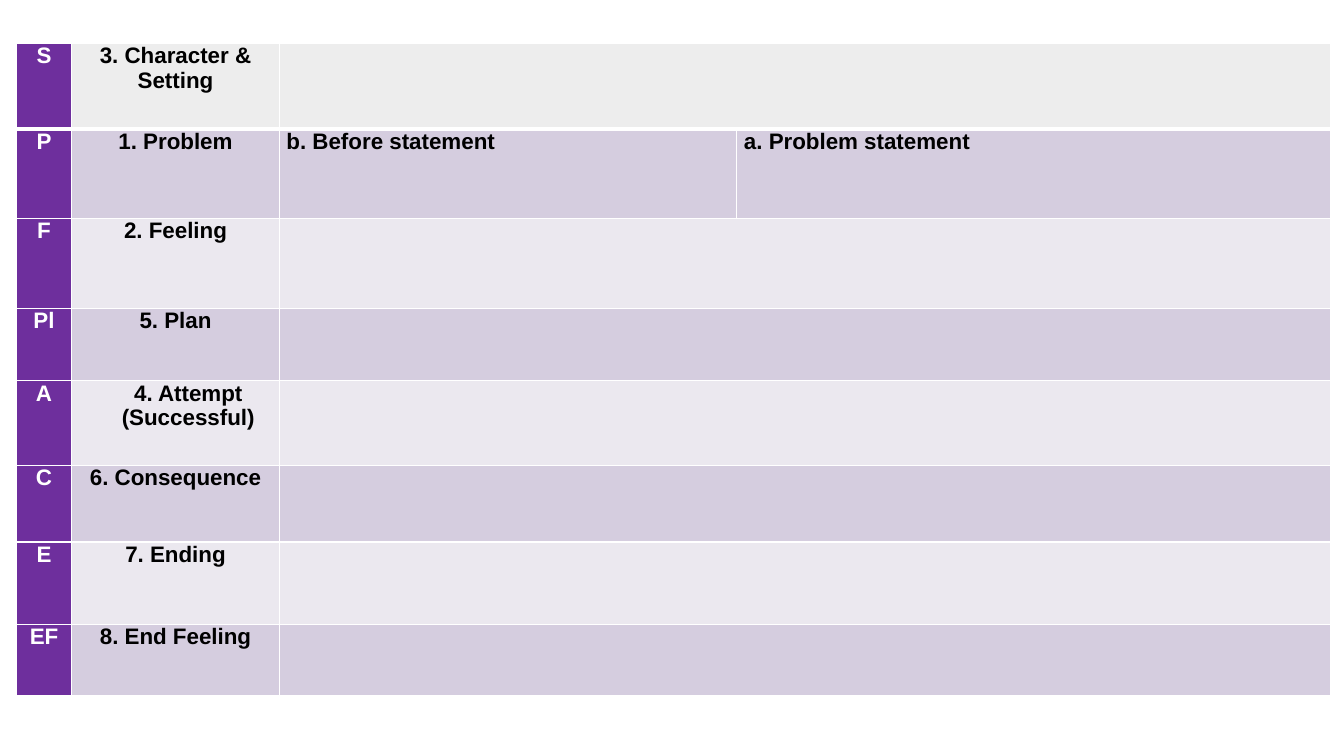
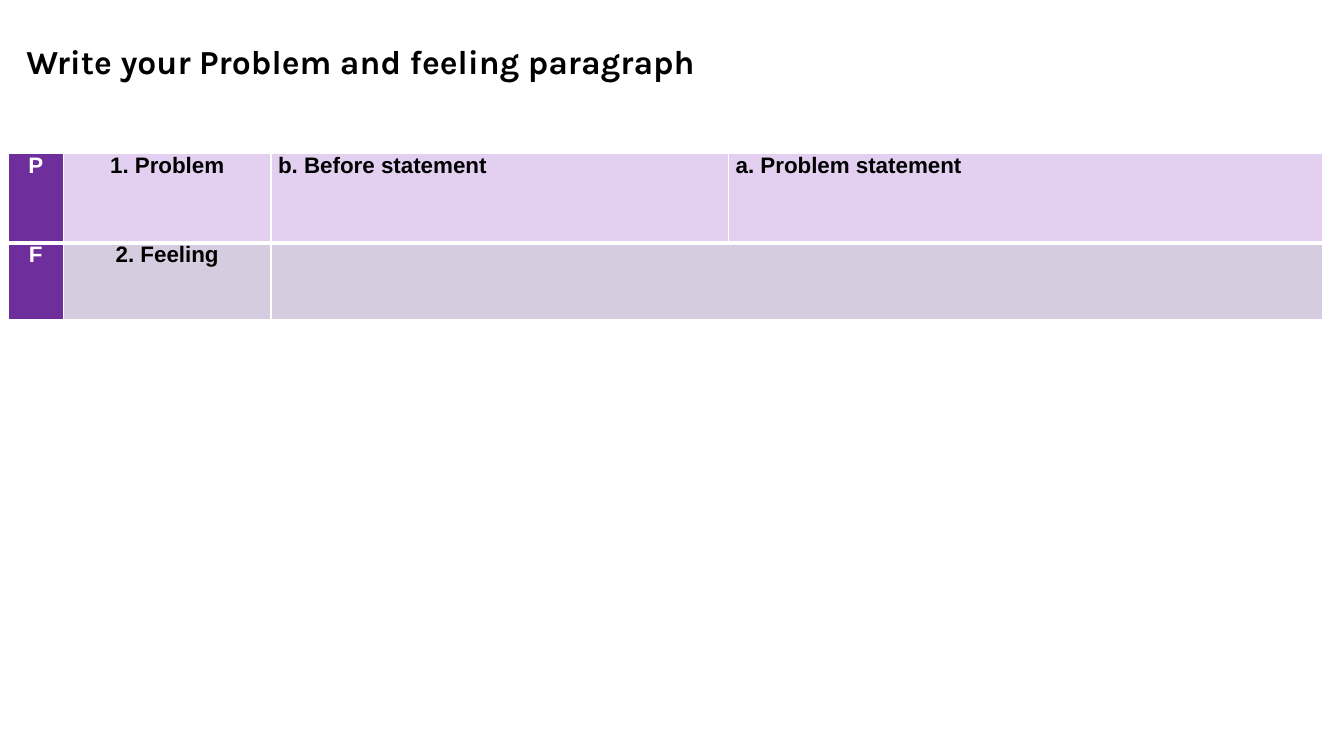
"""Build a story-planning grid and a paragraph-writing slide."""
from dataclasses import dataclass

from lxml import etree
from pptx import Presentation
from pptx.dml.color import RGBColor
from pptx.enum import text
from pptx.oxml import ns
from pptx.util import Cm, Pt

COLORS = {
    "purple": "6E2F9D",
    "grey": "EDEDED",
    "mauve": "D5CDDF",
    "pale": "EBE8EF",
    "lilac": "E3D0F1",
    "white": "FFFFFF",
    "black": "000000",
}
COL_WIDTHS = (1.4, 5.23, 11.53, 14.96)
HANGING = (0.97, -0.97)
CENTER, LEFT = text.PP_ALIGN.CENTER, text.PP_ALIGN.LEFT


@dataclass(frozen=True)
class Row:
    code: str
    label: str
    height: float
    prompts: tuple[str, ...] = ()
    indent: tuple[float, float] = (0, 0)


PROBLEM = Row("P", "1. Problem", 2.26,
              ("b. Before statement", "a. Problem statement"), HANGING)
STORY_ROWS = [
    Row("S", "3. Character &\nSetting", 2.16),
    PROBLEM,
    Row("F", "2. Feeling", 2.26),
    Row("Pl", "5. Plan", 1.83),
    Row("A", "4. Attempt (Successful)", 2.13, indent=(0.64, 0)),
    Row("C", "6. Consequence", 1.93),
    Row("E", "7. Ending", 2.08),
    Row("EF", "8. End Feeling", 1.8),
]
PARAGRAPH_ROWS = [PROBLEM, Row("F", "2. Feeling", 1.93)]


def rgb(name: str) -> RGBColor:
    return RGBColor.from_string(COLORS[name])


def add_run(p, content: str, font: str, size: float, color: str) -> None:
    r = p.add_run()
    r.text = content
    r.font.name, r.font.size, r.font.bold = font, Pt(size), True
    r.font.color.rgb = rgb(color)


def set_borders(cell, top: float, bottom: float) -> None:
    tc_pr = cell._tc.get_or_add_tcPr()
    for side, width in (("L", 1), ("R", 1), ("T", top), ("B", bottom)):
        ln = etree.SubElement(tc_pr, ns.qn(f"a:ln{side}"), w=str(Pt(width)))
        fill = etree.SubElement(ln, ns.qn("a:solidFill"))
        etree.SubElement(fill, ns.qn("a:srgbClr"), val=COLORS["white"])


def write_cell(cell, content: str, color: str, align,
               indent: tuple[float, float] = (0, 0)) -> None:
    tf = cell.text_frame
    for i, line in enumerate(content.split("\n")):
        p = tf.add_paragraph() if i else tf.paragraphs[0]
        p.alignment = align
        if any(indent):
            p_pr = p._p.get_or_add_pPr()
            p_pr.set("marL", str(Cm(indent[0])))
            p_pr.set("indent", str(Cm(indent[1])))
        add_run(p, line, "Arial", 16, color)


def add_story_table(s, left: float, top: float, rows: list[Row], first_fill: str) -> None:
    frame = s.shapes.add_table(len(rows), len(COL_WIDTHS), Cm(left), Cm(top),
                               Cm(sum(COL_WIDTHS)), Cm(sum(row.height for row in rows)))
    table = frame.table
    table.first_row = table.horz_banding = False
    for column, width in zip(table.columns, COL_WIDTHS):
        column.width = Cm(width)
    for i, row in enumerate(rows):
        table.rows[i].height = Cm(row.height)
        band = first_fill if i == 0 else "mauve" if i % 2 else "pale"
        cells = [table.cell(i, j) for j in range(len(COL_WIDTHS))]
        for j, cell in enumerate(cells):
            cell.margin_left = cell.margin_right = Cm(0.18)
            cell.margin_top = cell.margin_bottom = 0
            set_borders(cell, 3 if i == 1 else 1, 3 if i == 0 else 1)
            cell.fill.solid()
            cell.fill.fore_color.rgb = rgb(band if j else "purple")
        write_cell(cells[0], row.code, "white", CENTER)
        write_cell(cells[1], row.label, "black", CENTER, row.indent)
        for cell, prompt in zip(cells[2:], row.prompts):
            write_cell(cell, prompt, "black", LEFT, row.indent)
        if not row.prompts:
            cells[2].merge(cells[3])


def set_title(s, content: str) -> None:
    sp = s.shapes.title
    sp.left, sp.top, sp.width, sp.height = Cm(0.41), Cm(0.61), Cm(21.16), Cm(1.96)
    tf = sp.text_frame
    tf.vertical_anchor = text.MSO_ANCHOR.MIDDLE
    p = tf.paragraphs[0]
    p.alignment, p.line_spacing = LEFT, 0.9
    add_run(p, content, "Karla", 24, "black")


def main() -> None:
    prs = Presentation()
    prs.slide_width, prs.slide_height = Cm(33.87), Cm(19.05)

    s = prs.slides.add_slide(prs.slide_layouts[6])
    add_story_table(s, 0.41, 1.09, STORY_ROWS, "grey")

    s = prs.slides.add_slide(prs.slide_layouts[5])
    set_title(s, "Write your Problem and feeling paragraph")
    add_story_table(s, 0.2, 3.86, PARAGRAPH_ROWS, "lilac")

    prs.save("out.pptx")


if __name__ == "__main__":
    main()
